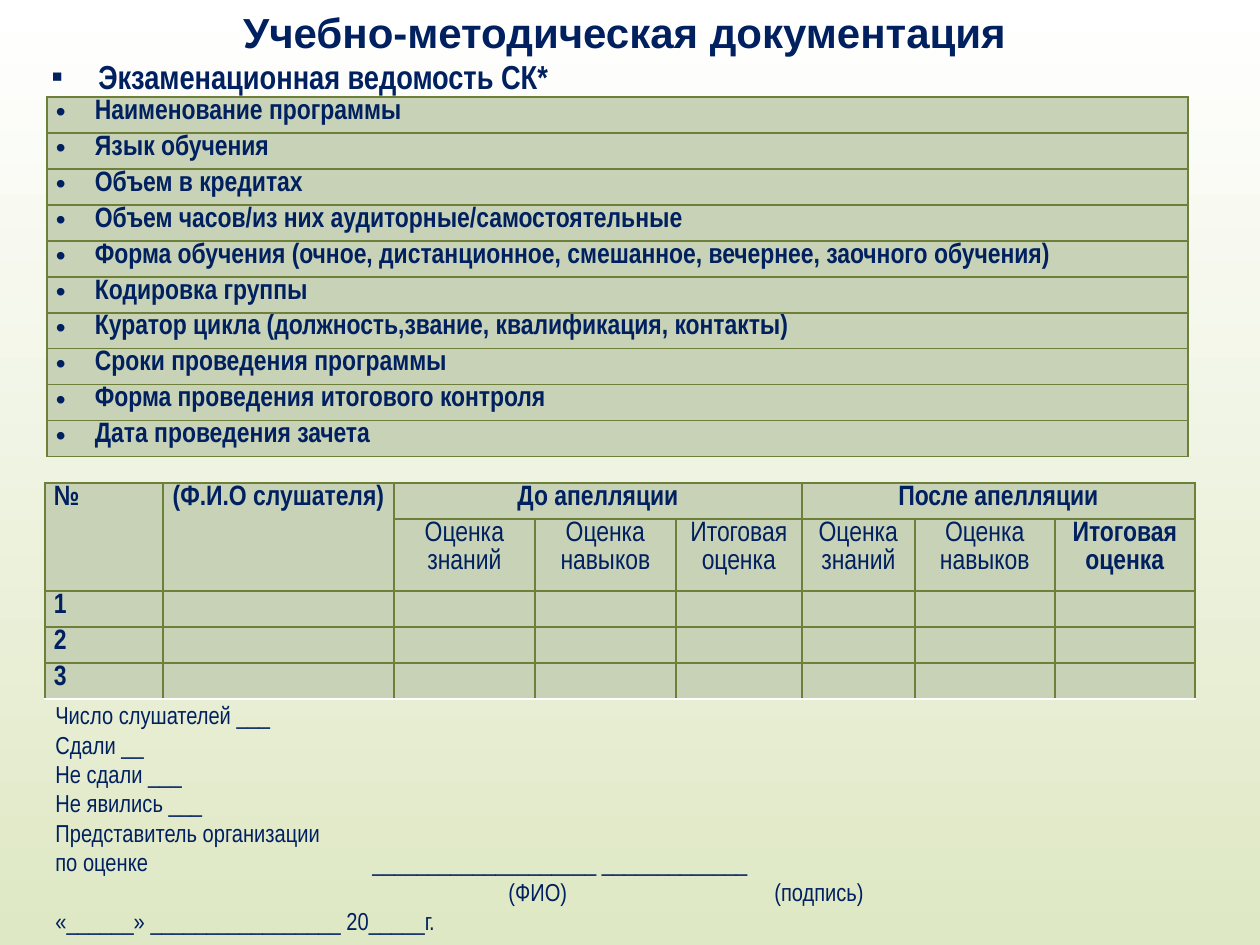
from lxml import etree
from pptx import Presentation
from pptx import util as u
from pptx.dml.color import RGBColor
from pptx.enum import text
from pptx.oxml import ns

NAVY = RGBColor(0x00, 0x20, 0x60)
OLIVE = RGBColor(0x6D, 0x7F, 0x39)
SAGE = RGBColor(0xC7, 0xD2, 0xB7)
WHITE = RGBColor(0xFF, 0xFF, 0xFF)
PALE_GREEN = RGBColor(0xDF, 0xE8, 0xC4)
CENTER = text.PP_ALIGN.CENTER
NARROW = "Arial Narrow"
ROW = 36

PROGRAM = [
    "Наименование программы",
    "Язык обучения",
    "Объем в кредитах",
    "Объем часов/из них аудиторные/самостоятельные",
    "Форма обучения (очное, дистанционное, смешанное, вечернее, заочного обучения)",
    "Кодировка группы",
    "Куратор цикла (должность,звание, квалификация, контакты)",
    "Сроки проведения программы",
    "Форма проведения итогового контроля",
    "Дата проведения зачета",
]
GRADES = ["Оценка знаний", "Оценка навыков", "Итоговая оценка"]
SUMMARY = [
    "Число слушателей ___",
    "Сдали __",
    "Не сдали ___",
    "Не явились ___",
    "Представитель организации",
    "по оценке\t____________________ _____________",
    "\t\t(ФИО)\t(подпись)",
    "«______» _________________ 20_____г.",
]
SUMMARY_TABS = [317, 453, 719]


def px(n):
    return u.Emu(round(n * 914400 / 126))


def sub(parent, tag, **attrs):
    return etree.SubElement(parent, ns.qn(tag), {k: str(v) for k, v in attrs.items()})


def write(p, words, size, bold=False, name=NARROW, align=None):
    p.alignment = align
    if not words:
        sub(p._p, "a:endParaRPr", sz=size * 100)
        return
    r = p.add_run()
    r.text = words
    font = {"size": u.Pt(size), "bold": bold, "name": name}
    for key, value in font.items():
        setattr(r.font, key, value)
    r.font.color.rgb = NAVY


def add_bullet(p, char, indent):
    pPr = p._p.get_or_add_pPr()
    pPr.set("marL", str(px(indent)))
    pPr.set("indent", str(-px(indent)))
    sub(pPr, "a:buFont", typeface="Arial")
    sub(pPr, "a:buChar", char=char)


def add_tabs(p, stops):
    tabs = sub(p._p.get_or_add_pPr(), "a:tabLst")
    for stop in stops:
        sub(tabs, "a:tab", pos=px(stop), algn="l")


def add_text(s, box, wrap=True):
    tf = s.shapes.add_textbox(*map(px, box)).text_frame
    tf.word_wrap = wrap
    return tf


def add_border(cell, side, color):
    ln = sub(cell._tc.get_or_add_tcPr(), f"a:ln{side}", w=u.Pt(1))
    sub(sub(ln, "a:solidFill"), "a:srgbClr", val=color)


def add_grid(s, left, top, widths, heights, bottom=OLIVE):
    frame = s.shapes.add_table(len(heights), len(widths),
                               *map(px, (left, top, sum(widths), sum(heights))))
    table = frame.table
    table.first_row = table.horz_banding = False
    for column, width in zip(table.columns, widths):
        column.width = px(width)
    for row, height in zip(table.rows, heights):
        row.height = px(height)
    last = len(heights) - 1
    margins = {"margin_left": px(9), "margin_right": px(9),
               "margin_top": 0, "margin_bottom": 0}
    for i, row in enumerate(table.rows):
        for cell in row.cells:
            for key, value in margins.items():
                setattr(cell, key, value)
            for side in "LRTB":
                add_border(cell, side, bottom if side == "B" and i == last else OLIVE)
            cell.fill.solid()
            cell.fill.fore_color.rgb = SAGE
    return table


def write_cell(cell, words, bold=True, align=None):
    p = cell.text_frame.paragraphs[0]
    p.line_spacing = 1.07
    write(p, words, 16, bold, align=align)
    return p


def add_program(s):
    table = add_grid(s, 47, 97, [1141], [ROW] * len(PROGRAM))
    for i, words in enumerate(PROGRAM):
        add_bullet(write_cell(table.cell(i, 0), words), "•", 39)


def add_marks(s):
    widths = [118, 231, 141, 141, 126, 113, 140, 140]
    table = add_grid(s, 45, 483, widths, [ROW, 2 * ROW] + [ROW] * 3, WHITE)
    for col in (0, 1):
        table.cell(0, col).merge(table.cell(1, col))
    write_cell(table.cell(0, 0), "№")
    write_cell(table.cell(0, 1), "(Ф.И.О слушателя)", align=CENTER)
    for col, words in ((2, "До апелляции"), (5, "После апелляции")):
        table.cell(0, col).merge(table.cell(0, col + 2))
        write_cell(table.cell(0, col), words, align=CENTER)
    for col, words in enumerate(GRADES * 2, 2):
        write_cell(table.cell(1, col), words, bold=col == 7, align=CENTER)
    for row in range(2, 5):
        for col in range(len(widths)):
            write_cell(table.cell(row, col), "" if col else str(row - 1))


def add_summary(s):
    tf = add_text(s, (43, 694, 1196, 251))
    for i, words in enumerate(SUMMARY):
        p = tf.add_paragraph() if i else tf.paragraphs[0]
        write(p, words, 14)
        if "\t" in words:
            add_tabs(p, SUMMARY_TABS)


def main():
    prs = Presentation()
    prs.slide_width, prs.slide_height = px(1260), px(945)
    s = prs.slides.add_slide(prs.slide_layouts[6])
    fill = s.background.fill
    fill.gradient()
    fill.gradient_angle = 270
    for stop, color in zip(fill.gradient_stops, (WHITE, PALE_GREEN)):
        stop.color.rgb = color

    p = add_text(s, (39, 50, 530, 53), wrap=False).paragraphs[0]
    write(p, "Экзаменационная ведомость СК*", 19, True)
    add_bullet(p, "▪", 47)
    add_program(s)
    add_marks(s)
    add_summary(s)
    p = add_text(s, (20, 0, 1221, 39)).paragraphs[0]
    write(p, "Учебно-методическая документация ", 24, True, "Arial", CENTER)
    prs.save("out.pptx")


if __name__ == "__main__":
    main()
